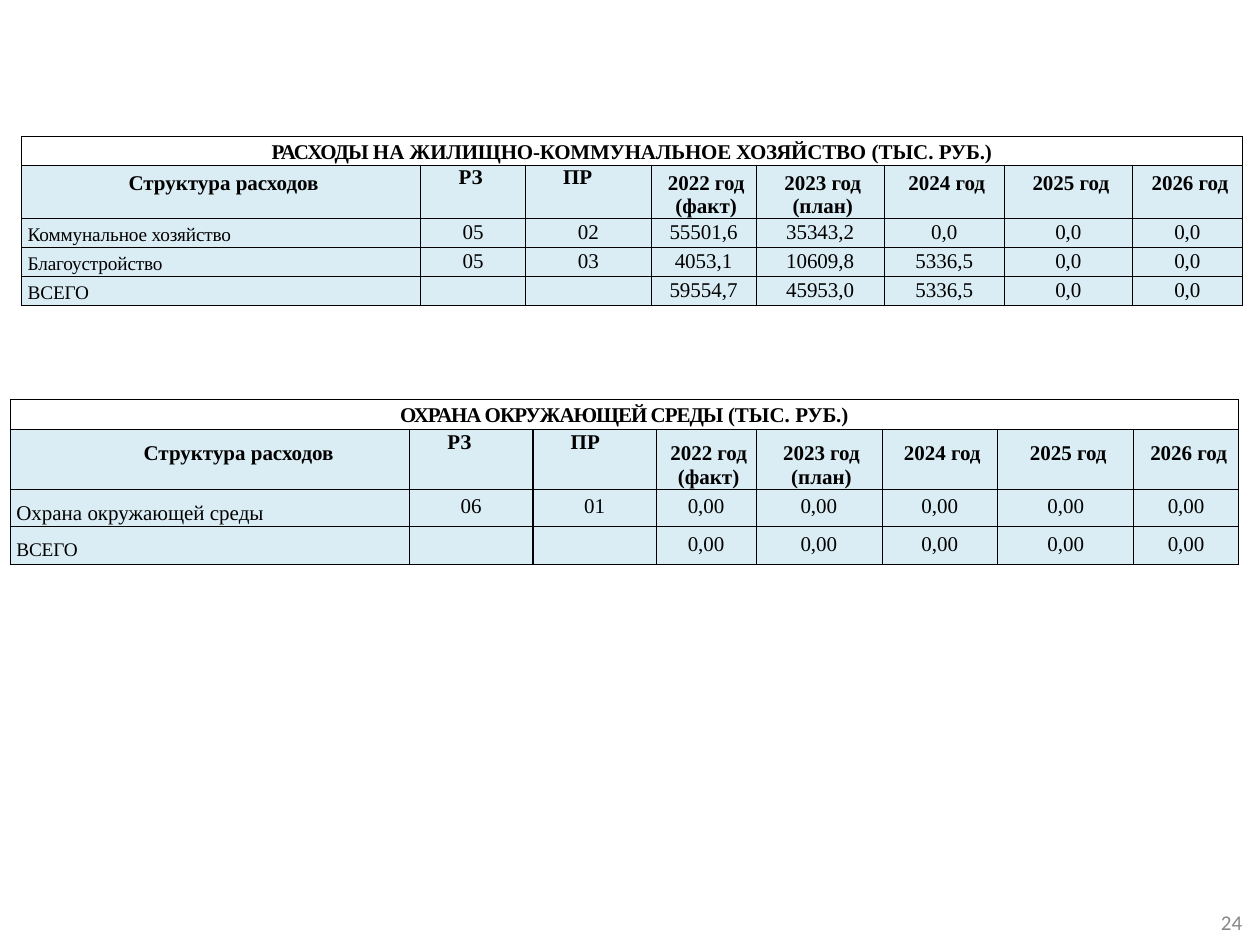
"""Builds a slide with two budget expenditure tables and a page number."""
from lxml.etree import SubElement
from pptx import Presentation
from pptx.dml.color import RGBColor
from pptx.enum.text import PP_ALIGN
from pptx.oxml.ns import qn
from pptx.util import Inches, Pt


def put_text(tf, *runs, size=12, bold=False, color="000000", font="Times New Roman",
             align=PP_ALIGN.LEFT, indent=0, line=None):
    """Fill the first paragraph with (text, letter spacing) runs."""
    p = tf.paragraphs[0]
    p.alignment = align
    if indent:
        p._p.get_or_add_pPr().set("marL", str(Inches(indent)))
    if line:
        p.line_spacing = Pt(line)
    for text, spacing in runs:
        r = p.add_run()
        r.text = text
        r.font.size = Pt(size)
        r.font.bold = bold
        r.font.name = font
        r.font.color.rgb = RGBColor.from_string(color)
        if spacing:
            r._r.get_or_add_rPr().set("spc", str(round(spacing * 100)))
    if not runs:
        SubElement(p._p, qn("a:endParaRPr"), sz=str(size * 100))


def style_cell(cell, col, top, fill=None, thick=True):
    """Set the insets, borders and fill of a table cell."""
    cell.margin_left = cell.margin_right = cell.margin_bottom = 0
    cell.margin_top = Inches(top)
    tcPr = cell._tc.get_or_add_tcPr()
    widths = {"L": 1 if thick and col in (2, 3) else 0.5,
              "R": 1 if thick and col in (1, 2) else 0.5, "T": 0.5, "B": 0.5}
    for side, width in widths.items():
        ln = SubElement(tcPr, qn(f"a:ln{side}"), w=str(Pt(width)))
        SubElement(SubElement(ln, qn("a:solidFill")), qn("a:srgbClr"), val="000000")
    if fill:
        cell.fill.solid()
        cell.fill.fore_color.rgb = RGBColor.from_string(fill)
    else:
        cell.fill.background()


prs = Presentation()
prs.slide_width, prs.slide_height = Inches(10), Inches(7.5)
s = prs.slides.add_slide(prs.slide_layouts[6])

CENTER = PP_ALIGN.CENTER
BLUE = "DBEDF4"
HEADERS = ["Структура расходов", "РЗ", "ПР", "2022 год (факт)", "2023 год (план)",
           "2024 год", "2025 год", "2026 год"]
tables = [
    dict(left=0.17, top=1.08,
         cols=[3.17, 0.83, 1, 0.83, 1.02, 0.95, 1.02, 0.87],
         heights=[0.23, 0.42, 0.23, 0.23, 0.23],
         title=[("РАСХОДЫ ", -0.6), ("НА ", 0), ("ЖИЛИЩНО-КОММУНАЛЬНОЕ ХОЗЯЙСТВО ", -0.1),
                ("(ТЫС. ", 0), ("РУБ.)", -0.1)],
         head_top=0.05, head_align=CENTER, head_indent=0.04,
         label_top=0.05, label_sizes=[11, 11, 11], value_top=0.02,
         rows=[["Коммунальное хозяйство", "05", "02", "55501,6", "35343,2", "0,0", "0,0", "0,0"],
               ["Благоустройство", "05", "03", "4053,1", "10609,8", "5336,5", "0,0", "0,0"],
               ["ВСЕГО", "", "", "59554,7", "45953,0", "5336,5", "0,0", "0,0"]]),
    dict(left=0.08, top=3.17,
         cols=[3.17, 0.98, 0.98, 0.79, 1, 0.92, 1.08, 0.83],
         heights=[0.24, 0.47, 0.3, 0.3],
         title=[("ОХРАНА ОКРУЖАЮЩЕЙ СРЕДЫ ", -0.6), ("(ТЫС. ", 0), ("РУБ.)", -0.1)],
         head_top=0.1, head_align=PP_ALIGN.LEFT, head_indent=1.06,
         label_top=0.1, label_sizes=[12, 11], value_top=0.05,
         rows=[["Охрана окружающей среды", "06", "01"] + ["0,00"] * 5,
               ["ВСЕГО", "", ""] + ["0,00"] * 5]),
]

for t in tables:
    frame = s.shapes.add_table(len(t["heights"]), len(t["cols"]), Inches(t["left"]),
                               Inches(t["top"]), Inches(sum(t["cols"])),
                               Inches(sum(t["heights"])))
    table = frame.table
    table.first_row = table.horz_banding = False
    for column, width in zip(table.columns, t["cols"]):
        column.width = Inches(width)
    for row, height in zip(table.rows, t["heights"]):
        row.height = Inches(height)

    for c in range(len(t["cols"])):
        style_cell(table.cell(0, c), c, 0.03, thick=False)
    table.cell(0, 0).merge(table.cell(0, len(t["cols"]) - 1))
    put_text(table.cell(0, 0).text_frame, *t["title"], bold=True, align=CENTER, line=13.8)

    for c, text in enumerate(HEADERS):
        cell = table.cell(1, c)
        code = c in (1, 2)
        style_cell(cell, c, 0.01 if code else t["head_top"], BLUE)
        align, indent = CENTER, 0.04
        if code:
            align, indent = PP_ALIGN.LEFT, 0.3
        elif c == 0:
            align, indent = t["head_align"], t["head_indent"]
        put_text(cell.text_frame, (text, 0), bold=True, align=align, indent=indent)

    for i, (values, size) in enumerate(zip(t["rows"], t["label_sizes"]), start=2):
        for c, text in enumerate(values):
            cell = table.cell(i, c)
            style_cell(cell, c, t["value_top"] if c else t["label_top"], BLUE)
            if c == 0:
                put_text(cell.text_frame, (text, -0.1 if size == 11 else 0), size=size,
                         indent=0.05, line=size + 1.5)
            elif text:
                put_text(cell.text_frame, (text, 0), align=CENTER)
            else:
                put_text(cell.text_frame)

page = s.shapes.add_textbox(Inches(9.69), Inches(7.22), Inches(0.27), Inches(0.25))
tf = page.text_frame
tf.word_wrap = True
tf.margin_left = tf.margin_right = tf.margin_top = tf.margin_bottom = 0
put_text(tf, ("24", 0), color="888888", font="Calibri")

prs.save("out.pptx")
